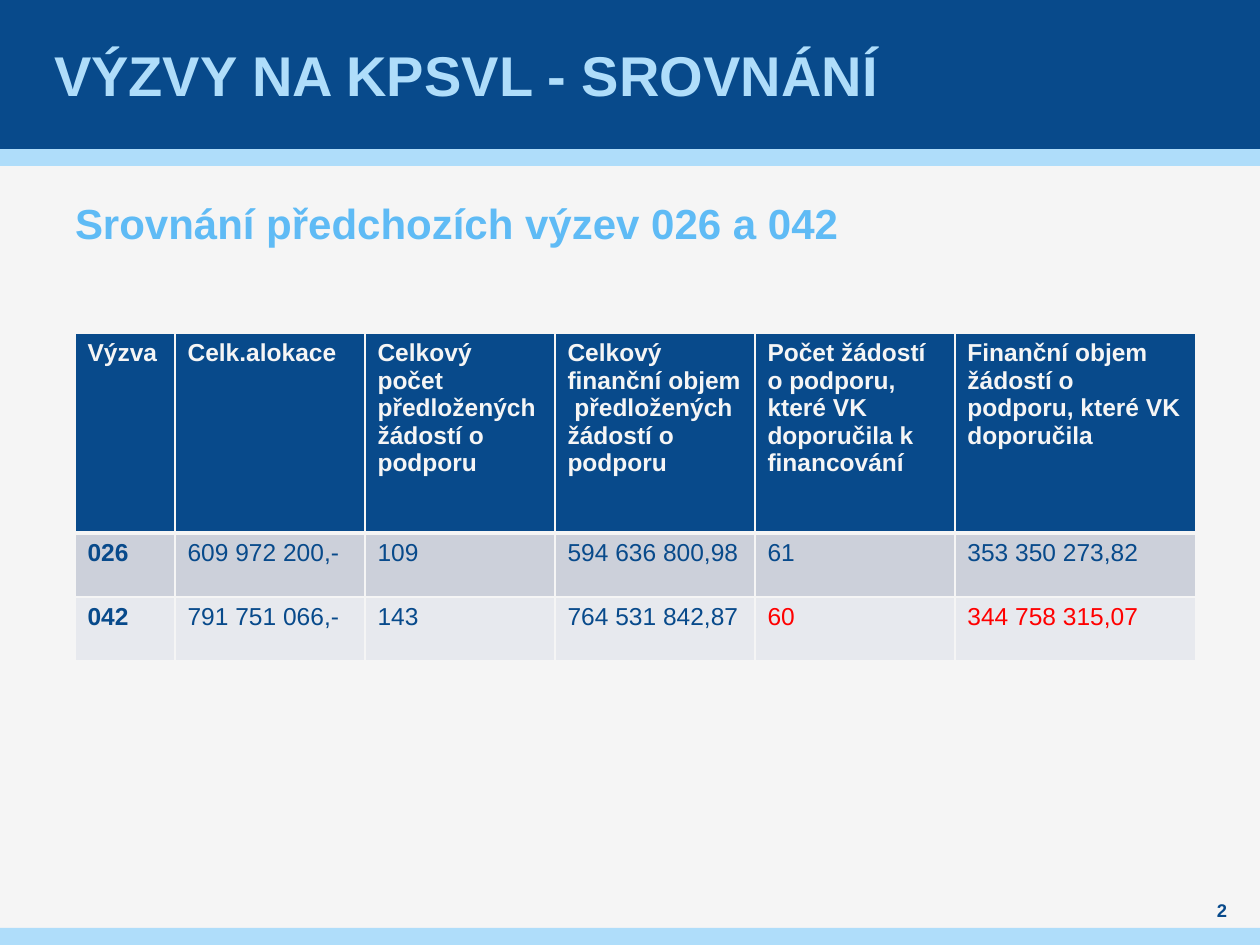
from dataclasses import dataclass

from lxml import etree
from pptx import Presentation
from pptx.dml.color import RGBColor
from pptx.enum.shapes import MSO_SHAPE
from pptx.enum.text import MSO_ANCHOR, MSO_AUTO_SIZE, PP_ALIGN
from pptx.oxml.ns import qn
from pptx.util import Emu, Pt

RECTANGLE = MSO_SHAPE.RECTANGLE
TOP, MIDDLE = MSO_ANCHOR.TOP, MSO_ANCHOR.MIDDLE
LEFT, CENTER = PP_ALIGN.LEFT, PP_ALIGN.CENTER
NO_AUTOFIT = MSO_AUTO_SIZE.NONE
EMU_PER_PX = 914400 / 126


def px(length):
    return Emu(round(length * EMU_PER_PX))


@dataclass(frozen=True)
class Theme:
    font: str = "Arial"
    paper: str = "F5F5F5"
    navy: str = "084A8B"
    pale_blue: str = "AFDDFA"
    sky: str = "5FBBF5"
    red: str = "FF0000"
    row_bands: tuple = ("CCD0DA", "E7E9EE")
    title_size: float = 32
    subtitle_size: float = 24
    table_size: float = 14
    number_size: float = 10.5


class SlideBuilder:
    def __init__(self, slide, theme):
        self.slide = slide
        self.theme = theme
        background = slide.background.fill
        background.solid()
        background.fore_color.rgb = RGBColor.from_string(theme.paper)

    def band(self, top, height, color):
        band = self.slide.shapes.add_shape(RECTANGLE, 0, px(top), px(1260), px(height))
        band.shadow.inherit = False
        band.fill.solid()
        band.fill.fore_color.rgb = RGBColor.from_string(color)
        band.line.fill.background()

    def style(self, paragraph, size, color, bold=True, align=LEFT):
        paragraph.alignment = align
        for run in paragraph.runs:
            font = run.font
            font.name, font.size, font.bold = self.theme.font, Pt(size), bold
            font.color.rgb = RGBColor.from_string(color)

    def set_text(self, shape, box, text, size, color, anchor=TOP, align=LEFT, inset=0):
        """Place a text-bearing shape at box and fill it with one styled paragraph."""
        shape.left, shape.top, shape.width, shape.height = map(px, box)
        frame = shape.text_frame
        frame.word_wrap, frame.auto_size = True, NO_AUTOFIT
        frame.vertical_anchor = anchor
        frame.margin_left = frame.margin_right = px(inset)
        frame.margin_top = frame.margin_bottom = 0
        frame.text = text
        paragraph = frame.paragraphs[0]
        self.style(paragraph, size, color, align=align)
        return paragraph

    def title(self, text, box):
        self.set_text(self.slide.shapes.title, box, text, self.theme.title_size,
                      self.theme.pale_blue, MIDDLE, inset=5)

    def subtitle(self, text, box):
        paragraph = self.set_text(self.slide.placeholders[1], box, text,
                                  self.theme.subtitle_size, self.theme.sky)
        paragraph.line_spacing = Pt(28.8)
        paragraph.space_before = paragraph.space_after = Pt(6)
        properties = paragraph._p.get_or_add_pPr()
        properties.set("marL", "0")
        properties.set("indent", "0")
        etree.SubElement(properties, qn("a:buNone"))

    def page_number(self, text, box):
        self.set_text(self.slide.shapes.add_textbox(0, 0, 0, 0), box, text,
                      self.theme.number_size, self.theme.navy, MIDDLE, CENTER)

    def borders(self, cell, widths):
        """Draw the cell's edges; widths maps L, R, T and B to points."""
        properties = cell._tc.get_or_add_tcPr()
        for side, width in widths.items():
            line = etree.SubElement(properties, qn(f"a:ln{side}"), w=str(Pt(width)))
            fill = etree.SubElement(line, qn("a:solidFill"))
            etree.SubElement(fill, qn("a:srgbClr"), val=self.theme.paper)

    def table(self, left, top, widths, heights, rows, highlights):
        theme = self.theme
        table = self.slide.shapes.add_table(
            len(rows), len(widths), px(left), px(top),
            px(sum(widths)), px(sum(heights))).table
        for column, width in zip(table.columns, widths):
            column.width = px(width)
        for row, height in zip(table.rows, heights):
            row.height = px(height)
        for r, values in enumerate(rows):
            header = r == 0
            band = theme.navy if header else theme.row_bands[(r - 1) % 2]
            for c, value in enumerate(values):
                cell = table.cell(r, c)
                self.borders(cell, {"L": 1, "R": 1, "T": 3 if r == 1 else 1,
                                    "B": 3 if header else 1})
                cell.fill.solid()
                cell.fill.fore_color.rgb = RGBColor.from_string(band)
                cell.text_frame.text = value
                color = theme.paper if header else theme.navy
                if value in highlights:
                    color = theme.red
                self.style(cell.text_frame.paragraphs[0], theme.table_size, color,
                           bold=header or c == 0)


def main():
    presentation = Presentation()
    presentation.slide_width, presentation.slide_height = px(1260), px(945)
    theme = Theme()
    slide = presentation.slides.add_slide(presentation.slide_layouts[1])
    builder = SlideBuilder(slide, theme)

    builder.band(149, 17, theme.pale_blue)
    builder.band(0, 149, theme.navy)
    builder.band(928, 17, theme.pale_blue)
    # The bands lie behind the placeholders.
    tree = slide.shapes._spTree
    for placeholder in list(slide.placeholders):
        tree.append(placeholder._element)
    builder.title("VÝZVY NA KPSVL - SROVNÁNÍ", (49, 0, 1160, 149))
    builder.subtitle("Srovnání předchozích výzev 026 a 042", (75, 198, 1111, 49))

    calls = [
        ("Výzva", "Celk.alokace", "Celkový počet předložených žádostí o podporu",
         "Celkový finanční objem  předložených žádostí o podporu",
         "Počet žádostí o podporu, které VK doporučila k financování",
         "Finanční objem žádostí o podporu, které VK doporučila"),
        ("026", "609 972 200,-", "109", "594 636 800,98", "61", "353 350 273,82"),
        ("042", "791 751 066,-", "143", "764 531 842,87", "60", "344 758 315,07"),
    ]
    builder.table(75, 333, (100, 190, 190, 200, 200, 241), (200, 64, 64), calls,
                  highlights=("60", "344 758 315,07"))
    builder.page_number("2", (1190, 898, 64, 25))
    presentation.save("out.pptx")


if __name__ == "__main__":
    main()
